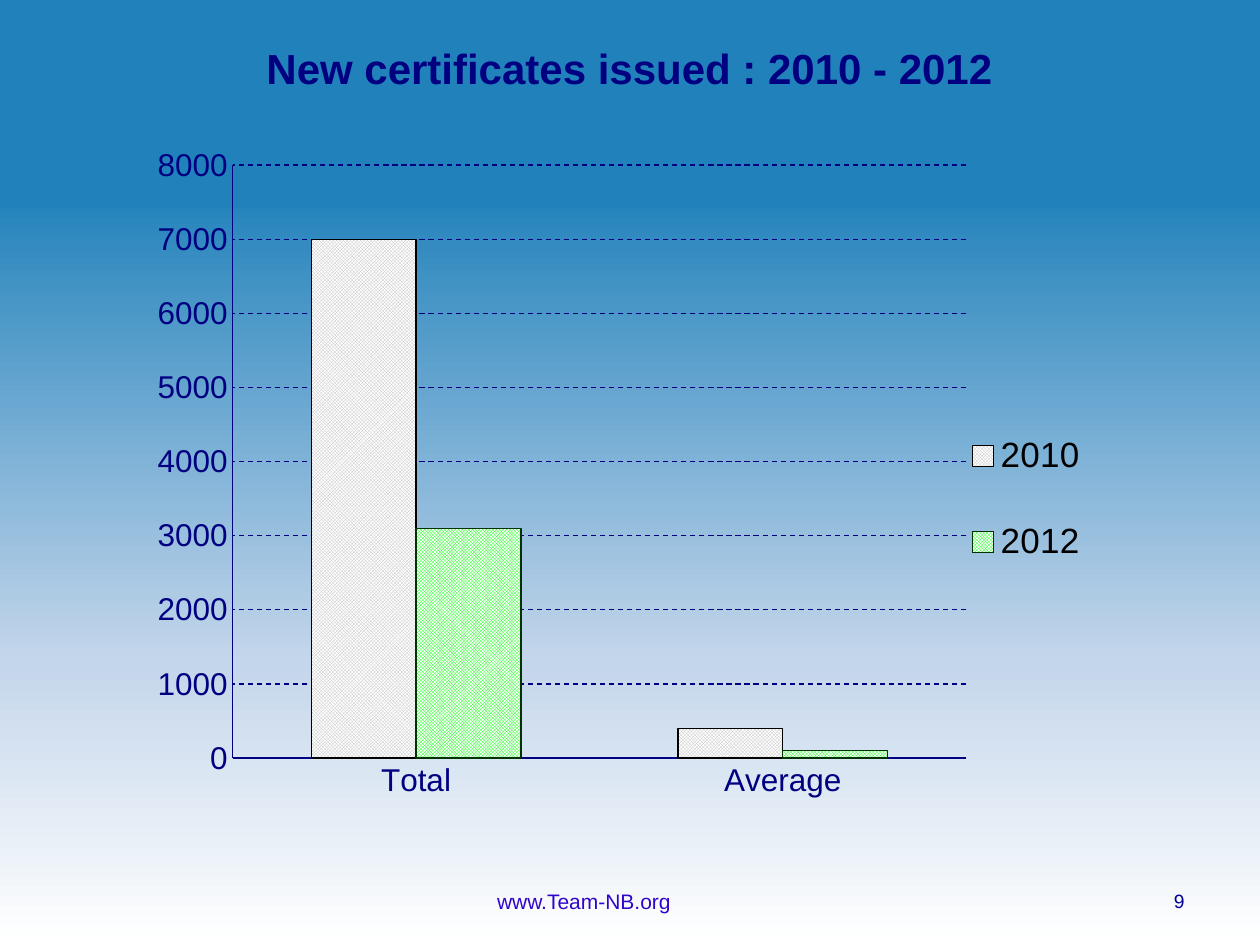
import copy

import pptx
import pptx.chart.data
import pptx.dml.color
import pptx.enum.chart
import pptx.enum.dml
import pptx.enum.shapes
import pptx.enum.text
import pptx.oxml
import pptx.oxml.ns
import pptx.util

Pt = pptx.util.Pt
ALIGN = pptx.enum.text.PP_ALIGN
COLORS = {
    "band": "2182BB",
    "haze": "C4D6EB",
    "white": "FFFFFF",
    "navy": "000080",
    "number": "000099",
    "footer": "2F05CB",
    "black": "000000",
    "grey": "BFBFBF",
    "green": "00FF00",
    "dark_green": "003300",
}
FONT = "Arial"


def color(name):
    return pptx.dml.color.RGBColor.from_string(COLORS[name])


def format_font(font, size, color_name, bold=False):
    font.name = FONT
    font.size = Pt(size)
    font.bold = bold
    font.color.rgb = color(color_name)


def format_line(line, color_name, width=0.75):
    line.color.rgb = color(color_name)
    line.width = Pt(width)


def set_background(slide, stops):
    fill = slide.background.fill
    fill.gradient()
    fill.gradient_angle = 270
    stop_list = next(slide.element.iter(pptx.oxml.ns.qn("a:gsLst")))
    while len(stop_list) < len(stops):
        stop_list.append(copy.deepcopy(stop_list[-1]))
    for stop, (position, color_name) in zip(fill.gradient_stops, stops):
        stop.position = position
        stop.color.rgb = color(color_name)


def add_band(slide):
    band = slide.shapes.add_shape(
        pptx.enum.shapes.MSO_SHAPE.RECTANGLE, 0, 0, Pt(720), Pt(118))
    band.shadow.inherit = False
    band.fill.solid()
    band.fill.fore_color.rgb = color("band")
    format_line(band.line, "band", 2)


def write_text(shape, text, size, color_name, alignment, bold=False):
    frame = shape.text_frame
    frame.word_wrap = True
    frame.vertical_anchor = pptx.enum.text.MSO_ANCHOR.MIDDLE
    frame.text = text
    paragraph = frame.paragraphs[0]
    paragraph.alignment = alignment
    format_font(paragraph.runs[0].font, size, color_name, bold)


def add_label(slide, left, width, text, size, color_name, alignment):
    box = slide.shapes.add_textbox(Pt(left), Pt(500.4), Pt(width), Pt(28.8))
    write_text(box, text, size, color_name, alignment)


def place_title(slide, text):
    title = slide.shapes.title
    title.left, title.top = Pt(25.2), Pt(20.9)
    title.width, title.height = Pt(669), Pt(36)
    write_text(title, text, 24, "navy", ALIGN.CENTER, True)
    title.text_frame.auto_size = pptx.enum.text.MSO_AUTO_SIZE.NONE
    slide.shapes.element.append(title.element)


def set_layout(element, left, top, width, height, inner=False):
    for old in element.findall(pptx.oxml.ns.qn("c:layout")):
        element.remove(old)
    target = '<c:layoutTarget val="inner"/>' if inner else ""
    modes = '<c:xMode val="edge"/><c:yMode val="edge"/>'
    sizes = "".join(
        f'<c:{tag} val="{value}"/>'
        for tag, value in zip("xywh", (left, top, width, height)))
    layout = pptx.oxml.parse_xml(
        f'<c:layout {pptx.oxml.ns.nsdecls("c")}><c:manualLayout>'
        f"{target}{modes}{sizes}</c:manualLayout></c:layout>")
    position = 0 if inner else 1
    element.insert(position, layout)


def format_axis(axis):
    axis.major_tick_mark = pptx.enum.chart.XL_TICK_MARK.NONE
    axis.minor_tick_mark = pptx.enum.chart.XL_TICK_MARK.NONE
    format_font(axis.tick_labels.font, 18, "navy")
    format_line(axis.format.line, "navy")


def format_series(series, pattern_color, line_color):
    fill = series.format.fill
    fill.patterned()
    fill.pattern = pptx.enum.dml.MSO_PATTERN.SMALL_CHECKER_BOARD
    fill.fore_color.rgb = color(pattern_color)
    fill.back_color.rgb = color("white")
    format_line(series.format.line, line_color)


def add_certificates_chart(slide):
    data = pptx.chart.data.CategoryChartData()
    data.categories = ["Total", "Average"]
    data.add_series("2010", [7000, 400])
    data.add_series("2012", [3100, 100])
    chart = slide.shapes.add_chart(
        pptx.enum.chart.XL_CHART_TYPE.COLUMN_CLUSTERED,
        Pt(76.3), Pt(74.9), Pt(566.6), Pt(389.5), data).chart
    chart.has_title = False
    format_font(chart.font, 10, "black")

    plot = chart.plots[0]
    plot.gap_width = 150
    plot.overlap = 0
    plot.vary_by_categories = False
    format_series(plot.series[0], "grey", "black")
    format_series(plot.series[1], "green", "dark_green")

    format_axis(chart.category_axis)
    values = chart.value_axis
    format_axis(values)
    values.minimum_scale = 0
    values.maximum_scale = 8000
    values.major_unit = 1000
    values.has_major_gridlines = True
    format_line(values.major_gridlines.format.line, "navy")
    values.major_gridlines.format.line.dash_style = pptx.enum.dml.MSO_LINE.DASH

    chart.has_legend = True
    legend = chart.legend
    legend.position = pptx.enum.chart.XL_LEGEND_POSITION.RIGHT
    legend.include_in_layout = False
    format_font(legend.font, 20, "black")
    plot_area = next(chart.element.iter(pptx.oxml.ns.qn("c:plotArea")))
    legend_element = next(chart.element.iter(pptx.oxml.ns.qn("c:legend")))
    set_layout(plot_area, 0.1, 0.05, 0.74, 0.87, inner=True)
    set_layout(legend_element, 0.84, 0.38, 0.12, 0.32)


def main():
    presentation = pptx.Presentation()
    presentation.slide_width = Pt(720)
    presentation.slide_height = Pt(540)
    slide = presentation.slides.add_slide(presentation.slide_layouts[5])
    set_background(slide, [(0.2, "band"), (0.7, "haze"), (1, "white")])
    add_band(slide)
    add_label(slide, 516.2, 167.8, "9", 11, "number", ALIGN.RIGHT)
    add_label(slide, 219.6, 228.2, "www.Team-NB.org", 12, "footer", ALIGN.CENTER)
    add_certificates_chart(slide)
    place_title(slide, "New certificates issued : 2010 - 2012")
    presentation.save("out.pptx")


if __name__ == "__main__":
    main()
